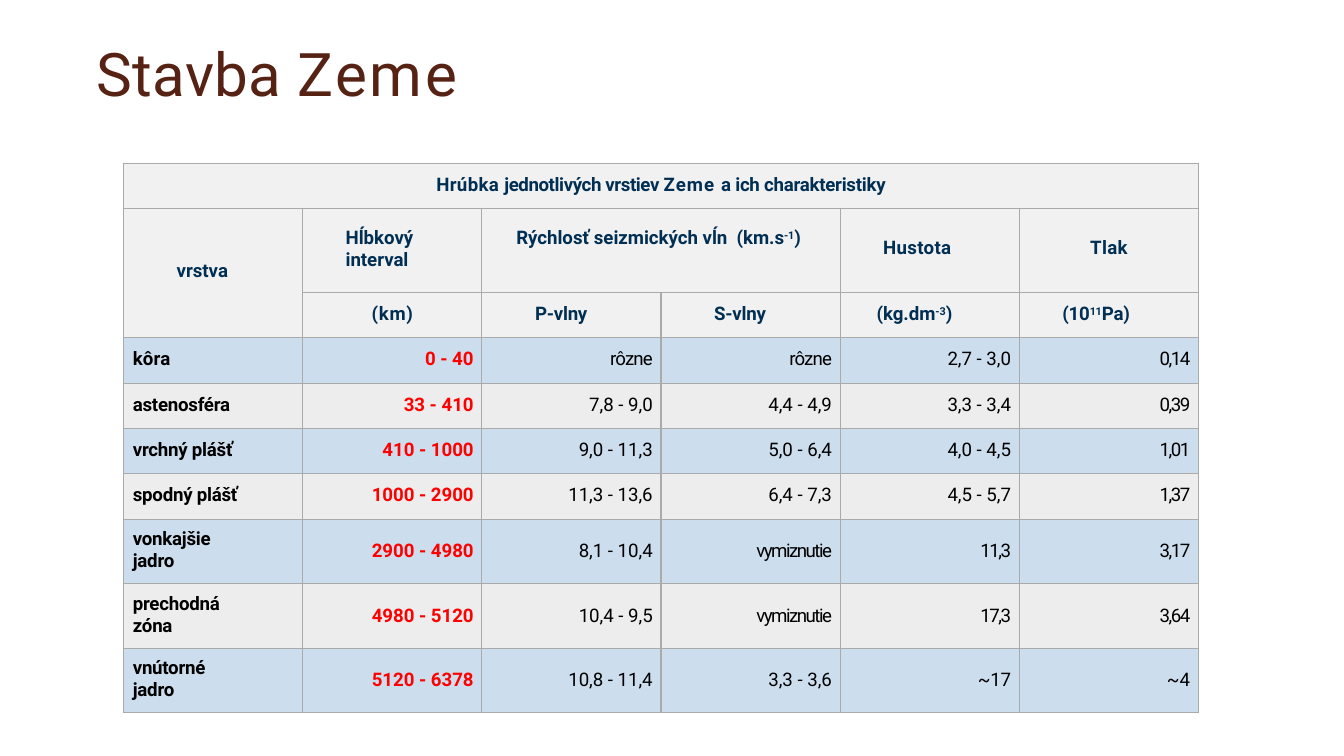
from dataclasses import dataclass

from lxml.etree import SubElement
from pptx import Presentation
from pptx.dml.color import RGBColor
from pptx.enum.text import MSO_ANCHOR, PP_ALIGN
from pptx.oxml.ns import qn
from pptx.util import Pt


@dataclass(frozen=True)
class Theme:
    font: str = "Roboto"
    title: str = "562213"
    heading: str = "002F53"
    text: str = "000000"
    depth: str = "FF0000"
    head_fill: str = "F1F1F1"
    band_fills: tuple = ("CCDDED", "EDEDED")
    border: str = "AAAAAA"
    border_width: float = 0.75
    title_size: float = 32.2
    body_size: float = 10


THEME = Theme()
LEFT, CENTER, RIGHT = PP_ALIGN.LEFT, PP_ALIGN.CENTER, PP_ALIGN.RIGHT
COL_WIDTH = 96
ROW_HEIGHTS = [24.3, 45] + [24.3] * 5 + [34.6] * 3
TOP = 5.8

CAPTION = [("Hrúbka ", 0.2), ("jednotlivých vrstiev ", -0.2), ("Zeme ", 0.6),
           ("a ", -0.1), ("ich ", -0.2), ("charakteristiky", -0.1)]

MERGES = [(0, 0, 0, 5), (1, 0, 2, 0), (1, 2, 1, 3)]

HEADINGS = [
    (0, 0, CAPTION, CENTER, 0, TOP, 0),
    (1, 0, [("vrstva", 0)], LEFT, 28.5, 28, 0),
    (1, 1, [("Hĺbkový interval", 0)], LEFT, 23, 10.2, 15),
    (1, 2, [("Rýchlosť seizmických vĺn  (km.s^-1^)", 0)], LEFT, 18.5, 10.2, 0),
    (1, 4, [("Hustota", 0.2)], LEFT, 23, 15.5, 0),
    (1, 5, [("Tlak", 0.2)], CENTER, 0, 15.5, 0),
    (2, 1, [("(km)", 0.4)], CENTER, 0, TOP, 0),
    (2, 2, [("P-vlny", -0.1)], LEFT, 28.5, TOP, 0),
    (2, 3, [("S-vlny", -0.1)], LEFT, 28.5, TOP, 0),
    (2, 4, [("(kg.dm^-3^)", 0)], LEFT, 19.5, TOP, 0),
    (2, 5, [("(10^11^Pa)", -0.1)], LEFT, 23, TOP, 0),
]

LAYERS = [
    ("kôra", "0 - 40", "rôzne", "rôzne", "2,7 - 3,0", "0,14"),
    ("astenosféra", "33 - 410", "7,8 - 9,0", "4,4 - 4,9", "3,3 - 3,4", "0,39"),
    ("vrchný plášť", "410 - 1000", "9,0 - 11,3", "5,0 - 6,4", "4,0 - 4,5", "1,01"),
    ("spodný plášť", "1000 - 2900", "11,3 - 13,6", "6,4 - 7,3", "4,5 - 5,7", "1,37"),
    ("vonkajšie\njadro", "2900 - 4980", "8,1 - 10,4", "vymiznutie", "11,3", "3,17"),
    ("prechodná\nzóna", "4980 - 5120", "10,4 - 9,5", "vymiznutie", "17,3", "3,64"),
    ("vnútorné jadro", "5120 - 6378", "10,8 - 11,4", "3,3 - 3,6", "~17", "~4"),
]

SPACING = {"rôzne": -0.45, "vymiznutie": -0.8, "11,3": -0.8, "17,3": -0.8,
           "~17": -0.1, "~4": 0.1, "kôra": 0.1}


def set_attrs(obj, values):
    for name, value in values.items():
        setattr(obj, name, value)


def add_run(p, text, spacing, size, color, bold, raised=False):
    r = p.add_run()
    r.text = text
    set_attrs(r.font, {"name": THEME.font, "size": Pt(size), "bold": bold})
    r.font.color.rgb = RGBColor.from_string(color)
    rPr = r._r.get_or_add_rPr()
    rPr.set("spc", str(round(spacing * 100)))
    if raised:
        rPr.set("baseline", "26000")


def add_runs(p, runs, size, color, bold):
    for text, spacing in runs:
        for i, part in enumerate(text.split("^")):
            if part:
                add_run(p, part, spacing, size, color, bold, i % 2 == 1)


def add_title(slide):
    sp = slide.shapes.add_textbox(Pt(51.8), Pt(18.7), Pt(200), Pt(39.6))
    tf = sp.text_frame
    set_attrs(tf, {"word_wrap": True, "margin_left": 0, "margin_right": 0,
                   "margin_top": Pt(0.9), "margin_bottom": 0})
    add_runs(tf.paragraphs[0], [("Stavba ", 0.2), ("Zeme", 1.5)],
             THEME.title_size, THEME.title, False)


def style_cell(cell, fill):
    tcPr = cell._tc.get_or_add_tcPr()
    for side in ("lnL", "lnR", "lnT", "lnB"):
        ln = SubElement(tcPr, qn(f"a:{side}"), w=str(Pt(THEME.border_width)))
        solid = SubElement(ln, qn("a:solidFill"))
        SubElement(solid, qn("a:srgbClr"), val=THEME.border)
    cell.fill.solid()
    cell.fill.fore_color.rgb = RGBColor.from_string(fill)


def fill_cell(cell, lines, color, bold, align, left, top, right):
    set_attrs(cell, {"margin_left": Pt(left), "margin_top": Pt(top),
                     "margin_right": Pt(right), "margin_bottom": 0,
                     "vertical_anchor": MSO_ANCHOR.TOP})
    tf = cell.text_frame
    for i, runs in enumerate(lines):
        p = tf.add_paragraph() if i else tf.paragraphs[0]
        p.alignment = align
        add_runs(p, runs, THEME.body_size, color, bold)


def add_layer(table, row, values):
    tall = ROW_HEIGHTS[row] > 30
    for col, value in enumerate(values):
        spacing = SPACING.get(value, (-0.1, 0, 0, 0, 0, -0.8)[col])
        lines = [[(line, spacing)] for line in value.split("\n")]
        color = THEME.depth if col == 1 else THEME.text
        if col == 0:
            place = (LEFT, 5, 5 if tall else TOP, 30)
        else:
            place = (RIGHT, 0, 11.5 if tall else TOP, 4.5)
        fill_cell(table.cell(row, col), lines, color, col < 2, *place)


def add_layer_table(slide):
    cols, rows = len(LAYERS[0]), len(ROW_HEIGHTS)
    frame = slide.shapes.add_table(rows, cols, Pt(66.2), Pt(87.4),
                                   Pt(COL_WIDTH * cols), Pt(sum(ROW_HEIGHTS)))
    table = frame.table
    set_attrs(table, {"first_row": False, "horz_banding": False})
    for column in table.columns:
        column.width = Pt(COL_WIDTH)
    head_rows = rows - len(LAYERS)
    for i, height in enumerate(ROW_HEIGHTS):
        table.rows[i].height = Pt(height)
        fill = THEME.head_fill if i < head_rows else THEME.band_fills[(i - head_rows) % 2]
        for cell in table.rows[i].cells:
            style_cell(cell, fill)
    for top, left, bottom, right in MERGES:
        table.cell(top, left).merge(table.cell(bottom, right))
    for row, col, runs, *place in HEADINGS:
        fill_cell(table.cell(row, col), [runs], THEME.heading, True, *place)
    for row, values in enumerate(LAYERS, head_rows):
        add_layer(table, row, values)


def main():
    prs = Presentation()
    set_attrs(prs, {"slide_width": Pt(720), "slide_height": Pt(405)})
    slide = prs.slides.add_slide(prs.slide_layouts[6])
    add_layer_table(slide)
    add_title(slide)
    prs.save("out.pptx")


if __name__ == "__main__":
    main()
